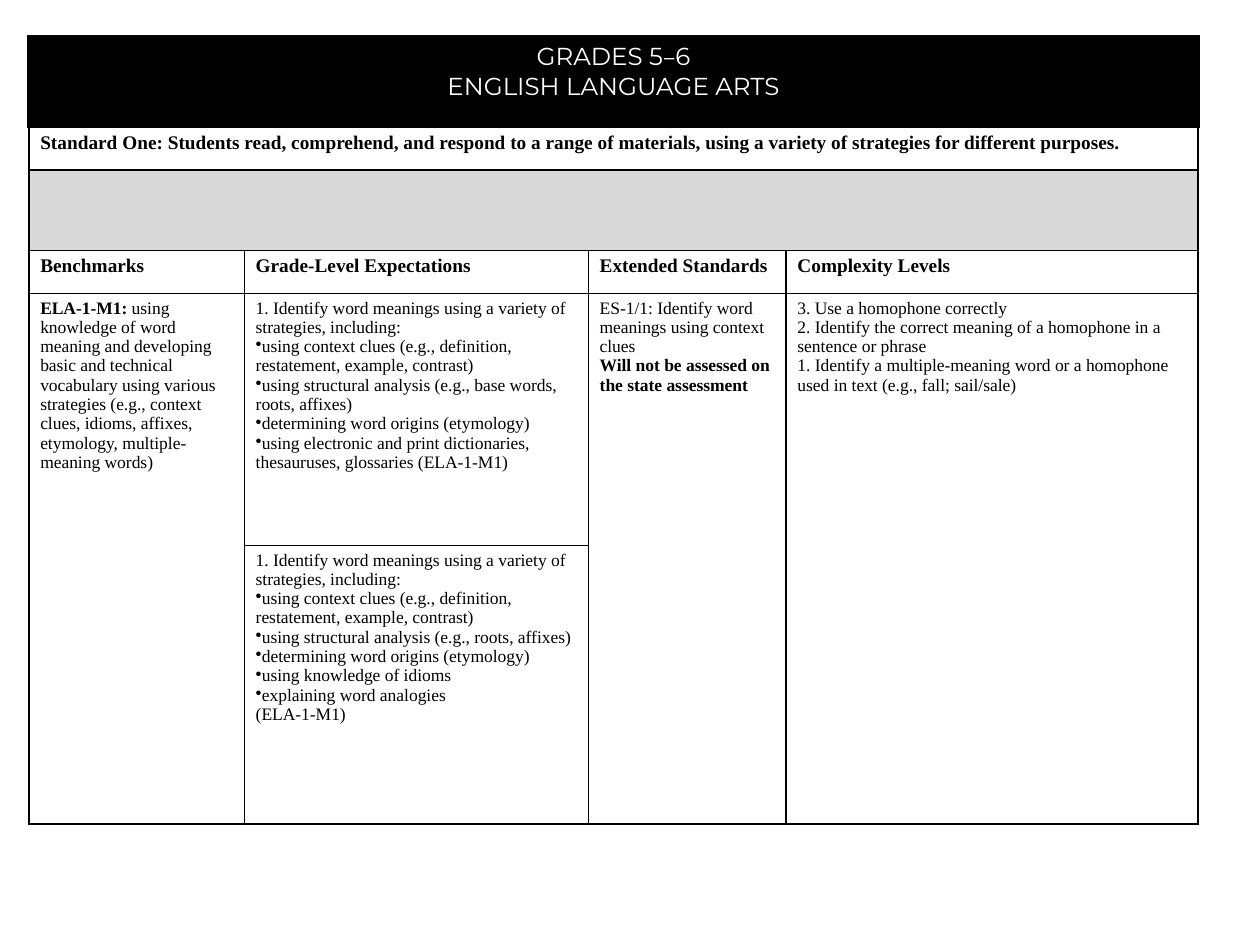
from lxml.etree import SubElement
from pptx import Presentation
from pptx.dml.color import RGBColor
from pptx.enum.text import PP_ALIGN as Align
from pptx.oxml.ns import qn
from pptx.util import Inches, Pt

COLUMNS = [1.71, 2.73, 1.57, 3.27]
ROWS = [0.72, 0.34, 0.64, 0.34, 2, 2.21]
SERIF = "Times New Roman"
HEADING = {"name": SERIF, "size": Pt(11), "bold": True}
BODY = {"name": SERIF, "size": Pt(10), "bold": False}
BANNER = {"name": "Montserrat", "size": Pt(14), "bold": False}

# "**" switches bold, a leading "•" makes a bullet, "\v" breaks a line.
STANDARD = ("Standard One: Students read, comprehend, and respond to a range of "
            "materials, using a variety of strategies for different purposes.")
HEADINGS = ["Benchmarks", "Grade-Level Expectations", "Extended Standards",
            "Complexity Levels"]
BENCHMARK = ["**ELA-1-M1:** using knowledge of word meaning and developing basic and "
             "technical vocabulary using various strategies (e.g., context clues, "
             "idioms, affixes, etymology, multiple-meaning words)"]
SHARED_EXPECTATIONS = [
    "1. Identify word meanings using a variety of strategies, including:",
    "•using context clues (e.g., definition, restatement, example, contrast)"]
ORIGINS = "•determining word origins (etymology)"
FIRST_EXPECTATIONS = SHARED_EXPECTATIONS + [
    "•using structural analysis (e.g., base words, roots, affixes)",
    ORIGINS,
    "•using electronic and print dictionaries, thesauruses, glossaries (ELA-1-M1)"]
SECOND_EXPECTATIONS = SHARED_EXPECTATIONS + [
    "•using structural analysis (e.g., roots, affixes)",
    ORIGINS,
    "•using knowledge of idioms",
    "•explaining word analogies \v(ELA-1-M1)"]
EXTENDED = ["ES-1/1: Identify word meanings using context clues",
            "**Will not be assessed on the state assessment**"]
COMPLEXITY = ["3. Use a homophone correctly",
              "2. Identify the correct meaning of a homophone in a sentence or phrase",
              "1. Identify a multiple-meaning word or a homophone used in text "
              "(e.g., fall; sail/sale)"]


def color(value):
    return RGBColor.from_string(value)


class StandardsPage:
    """Holds the slide and the look of its table."""

    def __init__(self, page, line="000000"):
        self.page = page
        self.line = line

    def table(self, left, top):
        frame = self.page.shapes.add_table(
            len(ROWS), len(COLUMNS), Inches(left), Inches(top),
            Inches(sum(COLUMNS)), Inches(sum(ROWS)))
        grid = frame.table
        grid.first_row = grid.horz_banding = False
        for column, width in zip(grid.columns, COLUMNS):
            column.width = Inches(width)
        for row, height in zip(grid.rows, ROWS):
            row.height = Inches(height)
        for cell in grid.iter_cells():
            self.borders(cell)
            cell.fill.background()
            margins = {"margin_left": 0.09, "margin_right": 0.09,
                       "margin_top": 0.04, "margin_bottom": 0.04}
            for name, size in margins.items():
                setattr(cell, name, Inches(size))
        return grid

    def borders(self, cell, **widths):
        """Draw all four sides, 1 point wide unless L, R, T or B says otherwise."""
        props = cell._tc.get_or_add_tcPr()
        for index, side in enumerate("LRTB"):
            tag = qn(f"a:ln{side}")
            for old in props.findall(tag):
                props.remove(old)
            border = SubElement(props, tag, w=str(Pt(widths.get(side, 1))))
            fill = SubElement(border, qn("a:solidFill"))
            SubElement(fill, qn("a:srgbClr"), val=self.line)
            props.insert(index, border)

    def fill(self, cell, shade):
        cell.fill.solid()
        cell.fill.fore_color.rgb = color(shade)

    def span(self, para, text, style, ink="000000", **changes):
        span = para.add_run()
        span.text = text
        for name, value in {**style, **changes}.items():
            setattr(span.font, name, value)
        span.font.color.rgb = color(ink)

    def cell_text(self, cell, lines, style, align=Align.LEFT):
        frame = cell.text_frame
        for index, line in enumerate(lines):
            para = frame.add_paragraph() if index else frame.paragraphs[0]
            para.alignment = align
            if line.startswith("•"):
                SubElement(para._p.get_or_add_pPr(), qn("a:buChar"), char="•")
            for row, part in enumerate(line.removeprefix("•").split("\v")):
                if row:
                    para.add_line_break()
                for turn, text in enumerate(part.split("**")):
                    if text:
                        self.span(para, text, style,
                                  bold=style["bold"] or turn % 2 == 1)


def main():
    deck = Presentation()
    deck.slide_width, deck.slide_height = Inches(10), Inches(7.5)
    sheet = StandardsPage(deck.slides.add_slide(deck.slide_layouts[6]))
    grid = sheet.table(0.23, 0.29)

    last = len(COLUMNS) - 1
    for row in range(3):
        grid.cell(row, 0).merge(grid.cell(row, last))
    for column in (0, 2, 3):
        grid.cell(4, column).merge(grid.cell(5, column))

    banner = grid.cell(0, 0)
    for column in range(len(COLUMNS)):
        sheet.borders(grid.cell(0, column), L=2, R=2, T=2)
    sheet.fill(banner, "000000")
    grades = banner.text_frame.paragraphs[0]
    for text, font in [("GRADES 5", "Montserrat"), ("–", "Cambria"), ("6", "Montserrat")]:
        sheet.span(grades, text, BANNER, "FFFFFF", name=font)
    subject = banner.text_frame.add_paragraph()
    sheet.span(subject, "ENGLISH LANGUAGE ARTS", BANNER, "FFFFFF")
    grades.alignment = subject.alignment = Align.CENTER

    sheet.cell_text(grid.cell(1, 0), [STANDARD], HEADING, Align.JUSTIFY)
    sheet.fill(grid.cell(2, 0), "D9D9D9")
    for column, heading in enumerate(HEADINGS):
        align = Align.LEFT if column == 2 else Align.JUSTIFY
        sheet.cell_text(grid.cell(3, column), [heading], HEADING, align)
    for column, lines in enumerate([BENCHMARK, FIRST_EXPECTATIONS, EXTENDED, COMPLEXITY]):
        sheet.cell_text(grid.cell(4, column), lines, BODY)
    sheet.cell_text(grid.cell(5, 1), SECOND_EXPECTATIONS, BODY)
    sheet.borders(grid.cell(4, 1), B=0.75)
    sheet.borders(grid.cell(5, 1), T=0.75)

    deck.save("out.pptx")


if __name__ == "__main__":
    main()
